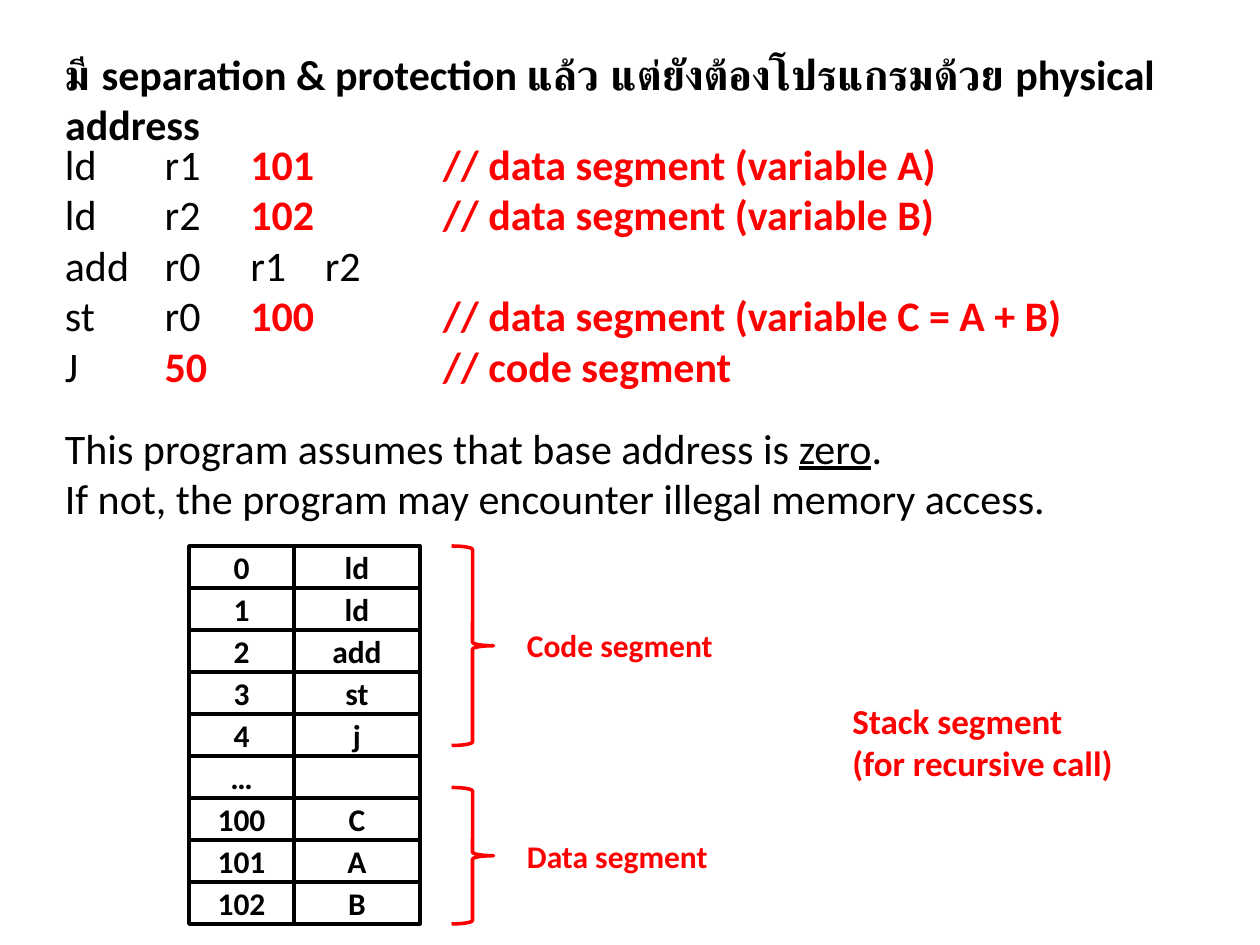
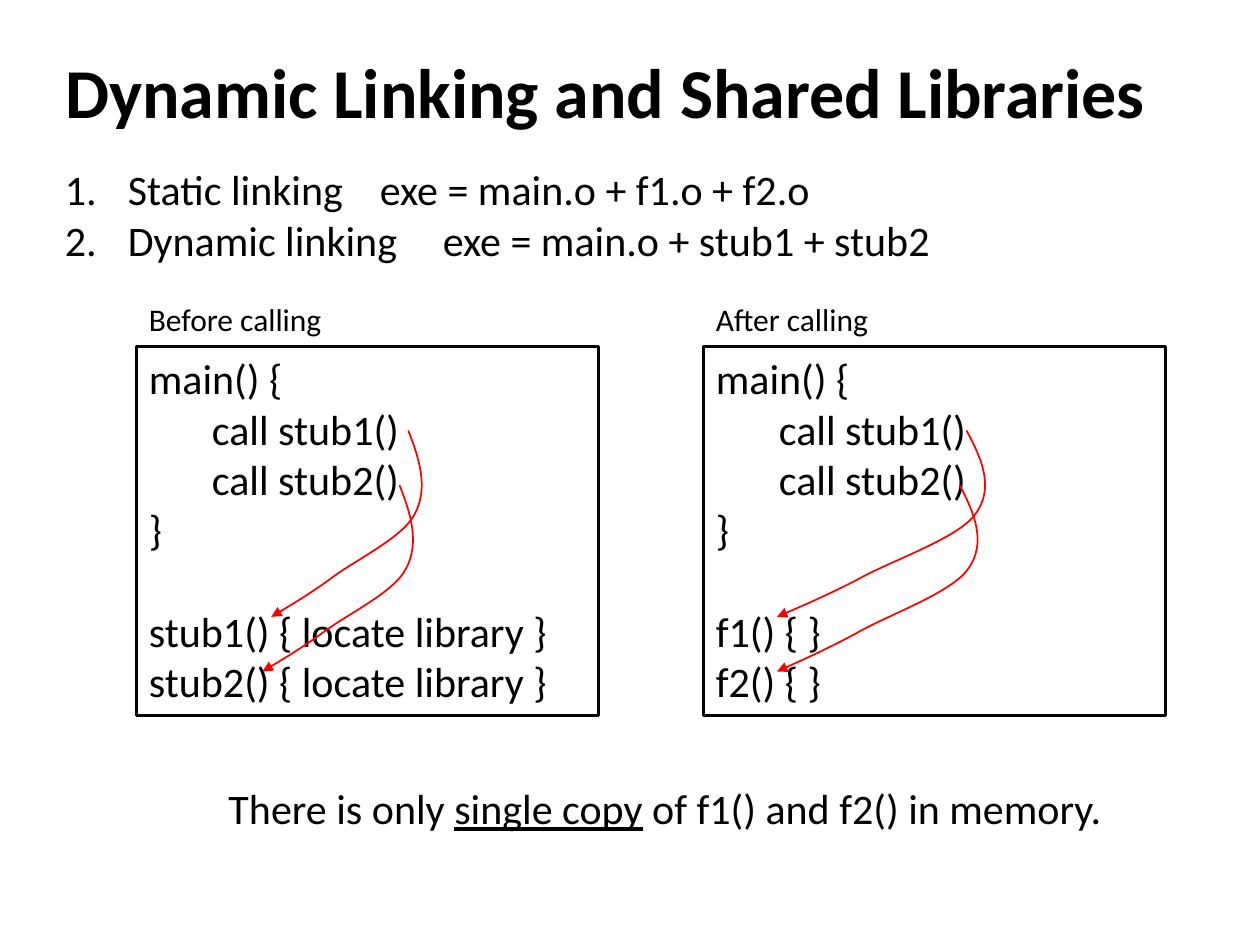
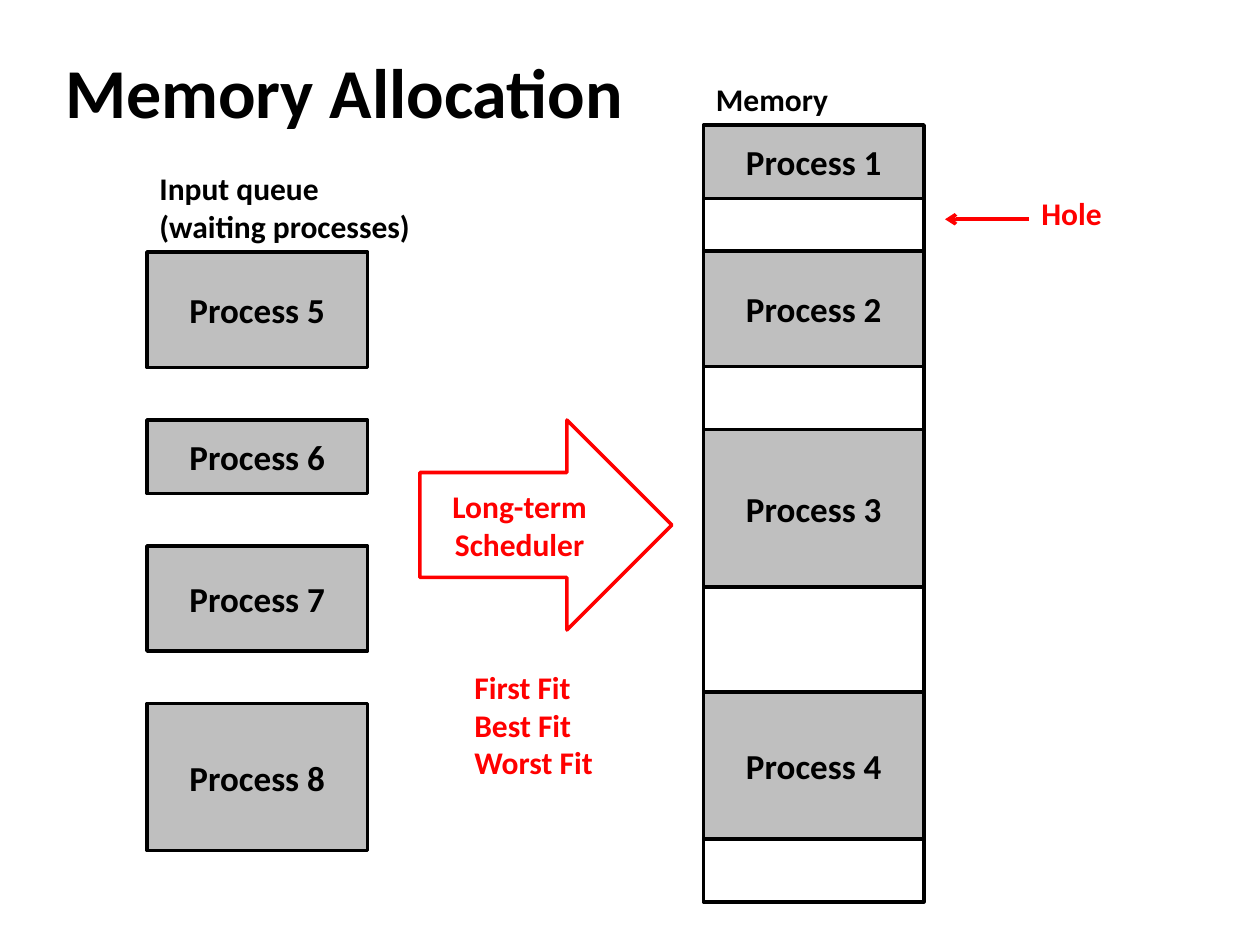
"""Build three slides on memory segments, dynamic linking and memory allocation."""
from lxml import etree
from pptx import Presentation
from pptx import util as u
from pptx.dml import color
from pptx.enum import shapes, text
from pptx.oxml import ns

BLACK, RED, GREY = "000000", "FF0000", "BFBFBF"
LEFT, CENTER = text.PP_ALIGN.LEFT, text.PP_ALIGN.CENTER
RECT = shapes.MSO_SHAPE.RECTANGLE
CURVE = [(.87, 0), (.94, .15), (1, .31), (.91, .45), (.83, .58), (.52, .7),
         (.37, .8), (.22, .89), (0, 1), (0, 1)]


def rgb(value):
    return color.RGBColor.from_string(value)


def pts(*values):
    return [u.Pt(v) for v in values]


def sub(parent, tag, **attrs):
    return etree.SubElement(parent, ns.qn(tag), {k: str(v) for k, v in attrs.items()})


class Deck:
    font = "Calibri"
    line_width = 2

    def __init__(self):
        self.prs = Presentation()
        self.prs.slide_width, self.prs.slide_height = pts(720, 540)

    def slide(self, title, size=40):
        self.s = self.prs.slides.add_slide(self.prs.slide_layouts[5])
        sp = self.s.shapes.title
        sp.left, sp.top, sp.width, sp.height = pts(30, 24, 660, 55 if size == 40 else 36)
        self.box_text(sp.text_frame, [title], size, bold=True)

    def box_text(self, tf, paras, size, **style):
        tf.word_wrap = True
        tf.auto_size = text.MSO_AUTO_SIZE.SHAPE_TO_FIT_TEXT
        tf.vertical_anchor = text.MSO_ANCHOR.TOP
        self.fill_text(tf, paras, size, **style)

    def fill_text(self, tf, paras, size, ink=BLACK, bold=False, align=LEFT, tabs=(),
                  hanging=0, numbered=False, before=None):
        for i, runs in enumerate(paras):
            p = tf.add_paragraph() if i else tf.paragraphs[0]
            p.alignment = align
            pPr = p._p.get_or_add_pPr()
            if hanging:
                pPr.set("marL", str(u.Pt(hanging)))
                pPr.set("indent", str(-u.Pt(hanging)))
            if numbered:
                sub(pPr, "a:buAutoNum", type="arabicPeriod")
            if tabs:
                tab_list = sub(pPr, "a:tabLst")
                for pos in tabs[min(i, len(tabs) - 1)]:
                    sub(tab_list, "a:tab", pos=u.Pt(pos), algn="l")
            if before and i in before:
                p.space_before = u.Pt(before[i])
            f = p.font
            f.name, f.size, f.bold = self.font, u.Pt(size), bold
            f.color.rgb = rgb(ink)
            for run in [runs] if isinstance(runs, str) else runs:
                self.add_words(p, *([run] if isinstance(run, str) else run))

    def add_words(self, p, words, mark=None):
        for i, part in enumerate(words.split("\v")):
            if i:
                p.add_line_break()
            r = p.add_run()
            r.text = part
            if mark == "underline":
                r.font.underline = True
            elif mark:
                r.font.bold = True
                r.font.color.rgb = rgb(mark)

    def label(self, box, paras, size=18, **style):
        sp = self.s.shapes.add_textbox(*pts(*box))
        self.box_text(sp.text_frame, paras, size, **style)

    def outline(self, sp, ink, width, fill=None):
        sp.shadow.inherit = False
        if fill:
            sp.fill.solid()
            sp.fill.fore_color.rgb = rgb(fill)
        else:
            sp.fill.background()
        sp.line.color.rgb = rgb(ink)
        sp.line.width = u.Pt(width)

    def shape(self, box, paras=(), size=18, kind=RECT, ink=BLACK, fill=None):
        sp = self.s.shapes.add_shape(kind, *pts(*box))
        self.outline(sp, ink, self.line_width, fill)
        if paras:
            self.fill_text(sp.text_frame, paras, size, ink=ink, bold=True, align=CENTER)
        return sp

    def code_box(self, box, lines, before):
        tf = self.shape(box).text_frame
        self.box_text(tf, lines, 24, hanging=36, before=before)

    def arrowhead(self, sp, kind):
        sub(sp.element.xpath(".//a:ln")[0], "a:tailEnd", type=kind)

    def curve(self, x, y, w, h):
        nodes = [pts(x + fx * w, y + fy * h) for fx, fy in CURVE]
        fb = self.s.shapes.build_freeform(*nodes[0])
        fb.add_line_segments(nodes[1:], close=False)
        sp = fb.convert_to_shape()
        self.outline(sp, RED, 1)
        self.arrowhead(sp, "triangle")
        route = sp.element.xpath(".//a:path")[0]
        steps = route.findall(ns.qn("a:lnTo"))
        for i in range(0, len(steps), 3):
            bezier = sub(route, "a:cubicBezTo")
            for step in steps[i:i + 3]:
                bezier.append(step[0])
                route.remove(step)

    def arrow(self, x1, y1, x2, y2):
        line = self.s.shapes.add_connector(shapes.MSO_CONNECTOR.STRAIGHT, *pts(x1, y1, x2, y2))
        line.line.color.rgb = rgb(RED)
        line.line.width = u.Pt(self.line_width)
        self.arrowhead(line, "arrow")
        sub(line.element.spPr, "a:effectLst")


def segments(d):
    d.slide("มี separation & protection แล้ว แต่ยังต้องโปรแกรมด้วย physical address", 24)
    wide, narrow = (57, 106, 155.5), (57, 106, 148.5)
    d.label((30, 75.6, 672, 153), [
        ["ld\tr1\t", ("101\t\t\t// data segment (variable A)", RED)],
        ["ld\tr2\t", ("102\t\t\t// data segment (variable B)", RED)],
        ["add\tr0\tr1\tr2\vst\tr0\t", ("100\t\t\t// data segment (variable C = A + B)", RED)],
        ["J\t", ("50\t\t\t\t// code segment", RED)],
    ], 24, tabs=(wide, wide, narrow))
    memory = [("0", "ld"), ("1", "ld"), ("2", "add"), ("3", "st"), ("4", "j"),
              ("…", ""), ("100", "C"), ("101", "A"), ("102", "B")]
    for i, (address, content) in enumerate(memory):
        y = 312 + 24 * i
        d.shape((108, y, 60, 24), [address])
        d.shape((168, y, 72, 24), [content] if content else ())
    for name, top, height, label_y in (("Code segment", 312, 114, 354),
                                       ("Data segment", 450, 78, 475)):
        d.shape((258, top, 24, height), kind=shapes.MSO_SHAPE.RIGHT_BRACE, ink=RED)
        d.label((294, label_y, 126, 29), [name], ink=RED, bold=True)
    d.label((480, 396, 174, 55), ["Stack segment\v(for recursive call)"], 20, ink=RED, bold=True)
    d.label((30, 237.6, 672, 65), [
        ["This program assumes that base address is ", ("zero", "underline"), "."],
        "If not, the program may encounter illegal memory access.",
    ], 24, tabs=(narrow,))


def linking(d):
    d.slide("Dynamic Linking and Shared Libraries")
    d.label((30, 90, 672, 65), [
        "Static linking\texe = main.o + f1.o + f2.o",
        "Dynamic linking\texe = main.o + stub1 + stub2",
    ], 24, hanging=36, numbered=True)
    caller = ["main() {", "\tcall stub1()", "\tcall stub2()", "}"]
    stubs = ["stub1() { locate library }", "stub2() { locate library }"]
    functions = ["f1() { }", "f2() { }"]
    for x, name, targets in ((78, "Before calling", stubs), (402, "After calling", functions)):
        d.code_box((x, 198, 264, 211), caller + targets, before={len(caller): 29.3})
        d.label((x, 168, 114, 29), [name])
    d.label((30, 443.5, 672, 36), [
        ["\tThere is only ", ("single copy", "underline"), " of f1() and f2() in memory."],
    ], 24, align=CENTER, tabs=((28,),))
    for x, y, w in ((155, 246, 90), (150, 277.2, 90), (444, 246, 124.5), (444, 277.2, 120)):
        d.curve(x, y, w, 106.5)


def allocation(d):
    d.slide("Memory Allocation")
    y = 71.4
    for name, height in (("Process 1", 42), ("", 30), ("Process 2", 66), ("", 36),
                         ("Process 3", 90), ("", 60), ("Process 4", 84), ("", 36)):
        d.shape((402, y, 126, height), [name] if name else (), 20, fill=GREY if name else None)
        y += height
    d.label((402, 42, 126, 29), ["Memory"], bold=True)
    y, gap = 144, 30
    for name, height in (("Process 5", 66), ("Process 6", 42), ("Process 7", 60),
                         ("Process 8", 84)):
        d.shape((84, y, 126, height), [name], 20, fill=GREY)
        y += height + gap
    d.label((84, 93, 168, 51), ["Input queue", "(waiting processes)"], bold=True)
    d.shape((240, 240, 144, 120), ["Long-term", "Scheduler"],
            kind=shapes.MSO_SHAPE.RIGHT_ARROW, ink=RED)
    d.label((264, 378, 96, 73), ["First Fit", "Best Fit", "Worst Fit"], ink=RED, bold=True)
    d.arrow(588, 125.3, 540, 125.3)
    d.label((588, 107.3, 60, 29), ["Hole"], ink=RED, bold=True)


def main():
    d = Deck()
    for build in (segments, linking, allocation):
        build(d)
    d.prs.save("out.pptx")


if __name__ == "__main__":
    main()
